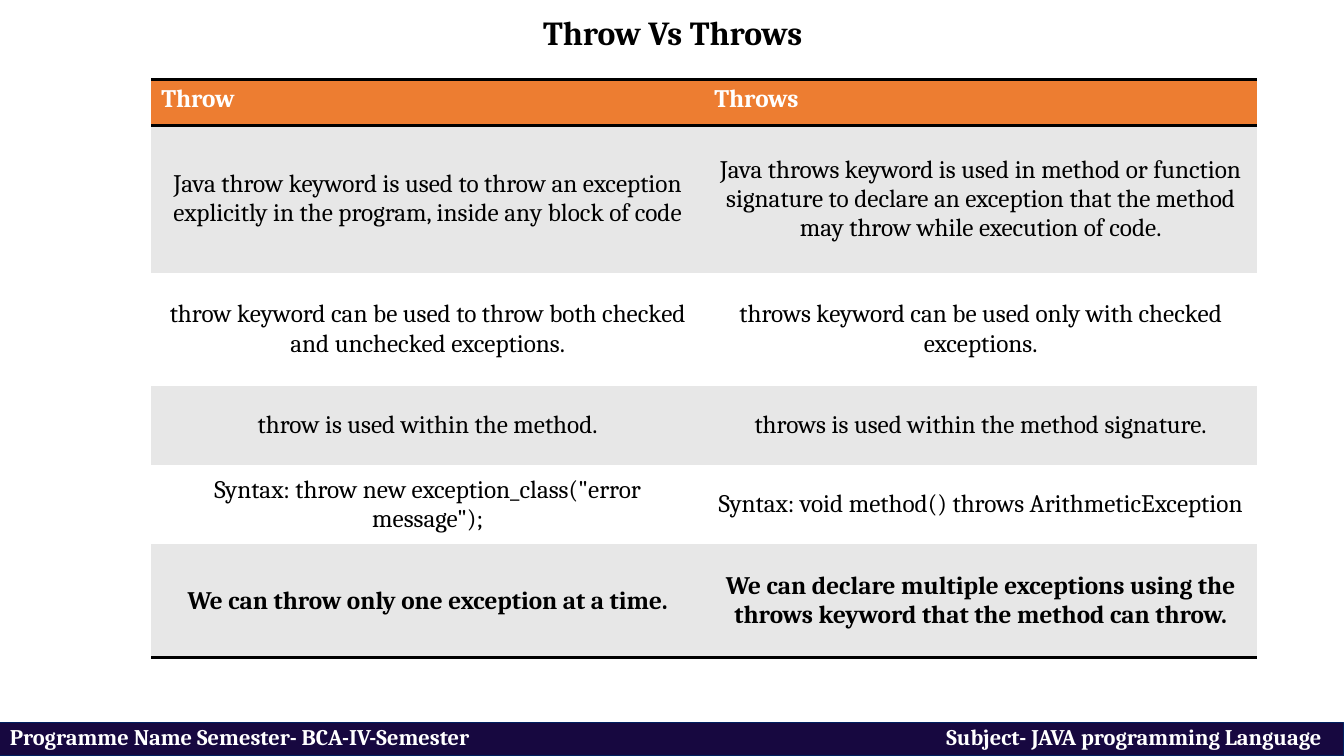
from dataclasses import dataclass

import lxml.etree
import pptx
import pptx.dml.color
import pptx.enum.shapes
import pptx.enum.text
import pptx.oxml.ns
import pptx.util

Align = pptx.enum.text.PP_ALIGN
Anchor = pptx.enum.text.MSO_ANCHOR


@dataclass(frozen=True)
class Theme:
    font: str = "Cambria"
    ink: str = "000000"
    paper: str = "FFFFFF"
    accent: str = "ED7D31"
    band: str = "E7E7E7"
    footer: str = "170840"
    footer_edge: str = "002060"
    title_size: int = 24
    table_size: int = 18
    footer_size: int = 16
    rule_width: int = 2


class SlideBuilder:
    def __init__(self, deck, theme):
        self.theme = theme
        self.width, self.height = deck.slide_width, deck.slide_height
        self.slide = deck.slides.add_slide(deck.slide_layouts[5])

    def across(self, percent):
        return int(self.width * percent / 100)

    def down(self, percent):
        return int(self.height * percent / 100)

    def area(self, left, top, width, height):
        return self.across(left), self.down(top), self.across(width), self.down(height)

    def rgb(self, value):
        return pptx.dml.color.RGBColor.from_string(value)

    def set_text(self, frame, text, size, color, bold, align):
        paragraph = frame.paragraphs[0]
        paragraph.text = text
        paragraph.alignment = align
        font = paragraph.font
        font.name, font.size, font.bold = self.theme.font, pptx.util.Pt(size), bold
        font.color.rgb = self.rgb(color)

    def title(self, text, area):
        heading = self.slide.shapes.title
        heading.left, heading.top, heading.width, heading.height = self.area(*area)
        frame = heading.text_frame
        frame.word_wrap = False
        frame.auto_size = pptx.enum.text.MSO_AUTO_SIZE.NONE
        frame.vertical_anchor = Anchor.MIDDLE
        self.set_text(frame, text, self.theme.title_size, self.theme.ink, True, Align.CENTER)

    def footer(self, programme, subject, area, tab_at):
        bar = self.slide.shapes.add_shape(
            pptx.enum.shapes.MSO_SHAPE.RECTANGLE, *self.area(*area))
        bar.shadow.inherit = False
        bar.fill.solid()
        bar.fill.fore_color.rgb = self.rgb(self.theme.footer)
        bar.line.color.rgb = self.rgb(self.theme.footer_edge)
        bar.line.width = pptx.util.Pt(0.75)
        frame = bar.text_frame
        frame.word_wrap = True
        frame.vertical_anchor = Anchor.TOP
        frame.margin_top = frame.margin_bottom = 0
        properties = frame.paragraphs[0]._p.get_or_add_pPr()
        tabs = lxml.etree.SubElement(properties, pptx.oxml.ns.qn("a:tabLst"))
        lxml.etree.SubElement(
            tabs, pptx.oxml.ns.qn("a:tab"), pos=str(self.across(tab_at)), algn="r")
        self.set_text(frame, f"{programme}\t{subject}", self.theme.footer_size,
                      self.theme.paper, True, Align.LEFT)

    def borders(self, cell, ruled_sides):
        qn = pptx.oxml.ns.qn
        properties = cell._tc.get_or_add_tcPr()
        for index, side in enumerate("LRTB"):
            line = properties.makeelement(qn(f"a:ln{side}"))
            properties.insert(index, line)
            if side in ruled_sides:
                line.set("w", str(pptx.util.Pt(self.theme.rule_width)))
                fill = lxml.etree.SubElement(line, qn("a:solidFill"))
                lxml.etree.SubElement(fill, qn("a:srgbClr"), val=self.theme.ink)
            else:
                lxml.etree.SubElement(line, qn("a:noFill"))

    def comparison(self, rows, area, row_heights):
        theme = self.theme
        table = self.slide.shapes.add_table(
            len(rows), len(rows[0]), *self.area(*area)).table
        table.horz_banding = False
        last = len(rows) - 1
        for r, (texts, height) in enumerate(zip(rows, row_heights)):
            table.rows[r].height = self.down(height)
            header = r == 0
            background = theme.accent if header else theme.band if r % 2 else theme.paper
            ruled_sides = "TB" if header else "T" if r == 1 else "B" if r == last else ""
            for c, text in enumerate(texts):
                cell = table.cell(r, c)
                cell.fill.solid()
                cell.fill.fore_color.rgb = self.rgb(background)
                cell.vertical_anchor = Anchor.TOP if header else Anchor.MIDDLE
                self.set_text(cell.text_frame, text, theme.table_size,
                              theme.paper if header else theme.ink,
                              r in (0, last), Align.LEFT if header else Align.CENTER)
                self.borders(cell, ruled_sides)


COMPARISON = [
    ("Throw", "Throws"),
    ("Java throw keyword is used to throw an exception explicitly in the program, "
     "inside any block of code",
     "Java throws keyword is used in method or function signature to declare an "
     "exception that the method may throw while execution of code."),
    ("throw keyword can be used to throw both checked and unchecked exceptions.",
     "throws keyword can be used only with checked exceptions."),
    ("throw is used within the method.",
     "throws is used within the method signature."),
    ('Syntax: throw new exception_class("error message");',
     "Syntax: void method() throws ArithmeticException"),
    ("We can throw only one exception at a time.",
     "We can declare multiple exceptions using the throws keyword that the method "
     "can throw."),
]


def main():
    deck = pptx.Presentation()
    deck.slide_width = pptx.util.Inches(13.33)
    deck.slide_height = pptx.util.Inches(7.5)
    builder = SlideBuilder(deck, Theme())
    builder.footer("Programme Name Semester- BCA-IV-Semester",
                   "Subject- JAVA programming Language",
                   area=(0, 95.6, 100, 4.4), tab_at=97.6)
    builder.title("Throw Vs Throws", area=(39.2, 0.93, 21.7, 6.67))
    builder.comparison(COMPARISON, area=(11.25, 10.5, 82.3, 76.5),
                       row_heights=(6.13, 19.47, 14.93, 10.5, 10.5, 14.93))
    deck.save("out.pptx")


if __name__ == "__main__":
    main()
